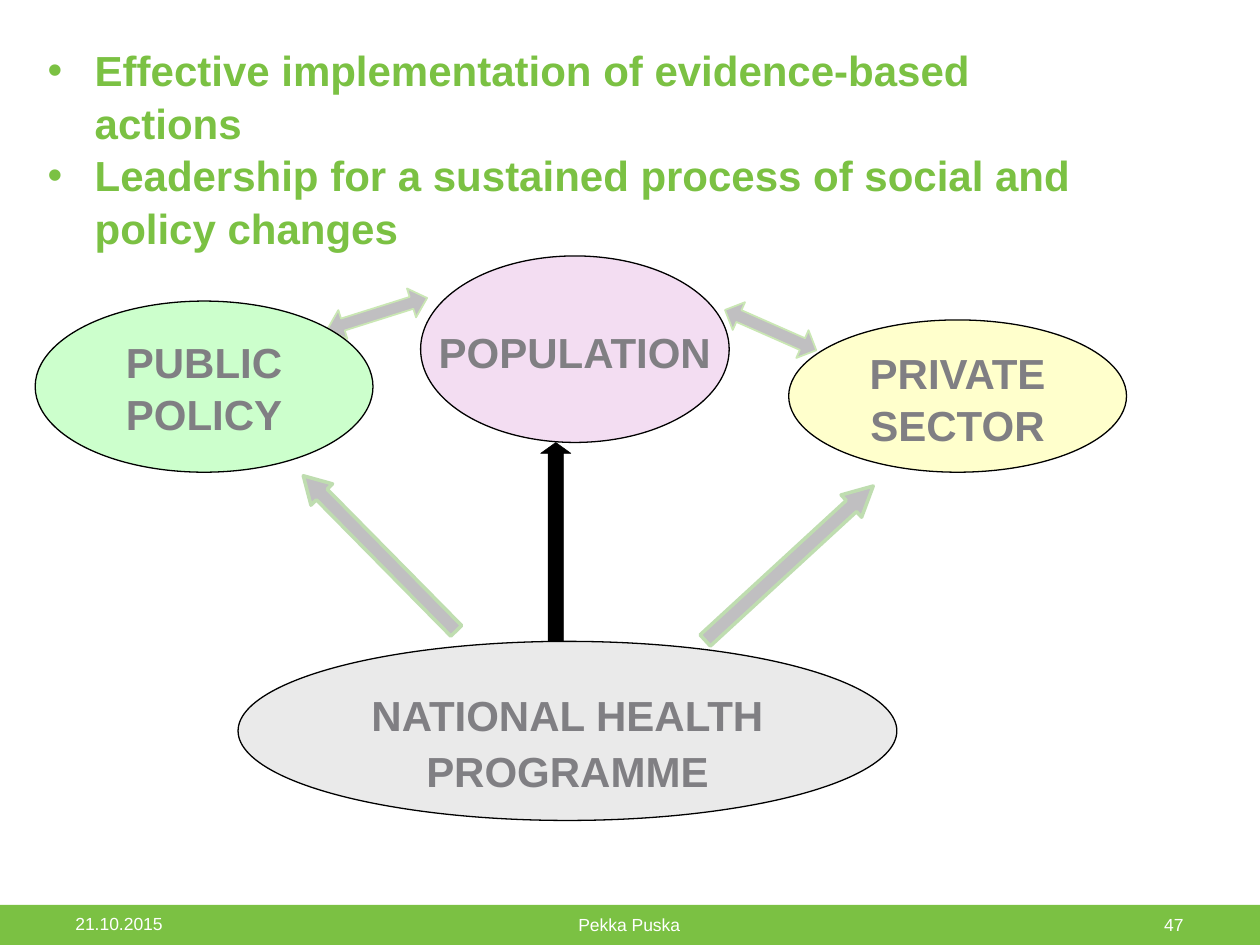
import lxml.etree
import pptx
import pptx.dml.color
import pptx.enum.shapes
import pptx.enum.text
import pptx.oxml.ns
import pptx.util
from pptx.util import Cm

SHAPE = pptx.enum.shapes.MSO_SHAPE
ALIGN = pptx.enum.text.PP_ALIGN
ANCHOR = pptx.enum.text.MSO_ANCHOR

THEME = {
    "font": "Arial",
    "green": "7BC143",
    "white": "FFFFFF",
    "label": "807F83",
    "outline": "000000",
    "arrow": "C0BFC1",
    "link edge": "CAE7B4",
    "influence edge": "BFDDB0",
    "heading size": 24,
    "footer size": 10,
    "line spacing": 1.04,
}

MESSAGES = [
    "Effective implementation of evidence-based actions",
    "Leadership for a sustained process of social and policy changes",
]
MESSAGE_BOX = (0.71, 0.74, 21.79, 4.37)
BULLET_INDENT = 0.95

# All boxes are left, top, width, height in centimetres.
FOOTER_BAR = (0, 18.24, 25.4, 0.81)
FOOTERS = [
    ("21.10.2015", (1.27, 18.31, 3.02, 0.61), ALIGN.LEFT),
    ("Pekka Puska", (4.29, 18.34, 16.79, 0.61), ALIGN.CENTER),
    ("47", (21.11, 18.34, 3, 0.61), ALIGN.RIGHT),
]

# Label lines, box, fill, line spacing, top inset
ACTORS = [
    (["PUBLIC", "POLICY"], (0.71, 6.07, 6.81, 3.45), "CCFFCC", 1.04, 0.13),
    (["NATIONAL HEALTH", "PROGRAMME"], (4.8, 12.93, 13.28, 3.61), "EAEAEA", 1.1, 0.5),
    (["POPULATION"], (8.48, 5.16, 6.22, 3.76), "F3DDF2", 1.04, 0.2),
    (["PRIVATE", "SECTOR"], (15.9, 6.45, 6.81, 3.07), "FFFFCC", 1.04, 0.2),
]

# Preset, box, rotation, adjustments, fill, edge, edge width
ARROWS_BEHIND = [
    (SHAPE.LEFT_RIGHT_ARROW, (6.55, 6.02, 2.11, 0.61), 342.5, (0.41, 0.54),
     "arrow", "link edge", 1),
    (SHAPE.LEFT_ARROW, (5.46, 10.85, 4.39, 0.61), 45.4, (0.5, 0.87),
     "arrow", "influence edge", 2),
    (SHAPE.RIGHT_ARROW, (13.61, 11.05, 4.6, 0.61), 317.4, (0.5, 0.98),
     "arrow", "influence edge", 2),
]
ARROWS_IN_FRONT = [
    (SHAPE.UP_ARROW, (10.9, 8.92, 0.61, 4.01), 0, (0.5, 0.36),
     "outline", "outline", 0.25),
    (SHAPE.LEFT_RIGHT_ARROW, (14.53, 6.35, 2.01, 0.61), 23.8, (0.42, 0.5),
     "arrow", "link edge", 1),
]


def color(value):
    return pptx.dml.color.RGBColor.from_string(value)


def add_shape(slide, preset, box, fill, edge=None, edge_width=0):
    shape = slide.shapes.add_shape(preset, *map(Cm, box))
    shape.shadow.inherit = False
    shape.fill.solid()
    shape.fill.fore_color.rgb = color(fill)
    if edge:
        shape.line.color.rgb = color(edge)
        shape.line.width = pptx.util.Pt(edge_width)
    else:
        shape.line.fill.background()
    return shape


def add_bullet(paragraph):
    properties = paragraph._p.get_or_add_pPr()
    properties.set("marL", str(Cm(BULLET_INDENT)))
    properties.set("indent", str(-Cm(BULLET_INDENT)))
    for tag, attribute, value in [("a:buFont", "typeface", THEME["font"]),
                                  ("a:buChar", "char", "•")]:
        element = lxml.etree.SubElement(properties, pptx.oxml.ns.qn(tag))
        element.set(attribute, value)


def write_lines(frame, lines, size, text_color, align=ALIGN.LEFT, bold=False,
                spacing=None, bulleted=False):
    for index, line in enumerate(lines):
        paragraph = frame.add_paragraph() if index else frame.paragraphs[0]
        paragraph.text = line
        paragraph.alignment = align
        paragraph.line_spacing = spacing
        if bulleted:
            add_bullet(paragraph)
        paragraph.font.name = THEME["font"]
        paragraph.font.size = pptx.util.Pt(size)
        paragraph.font.bold = bold
        paragraph.font.color.rgb = color(text_color)


def add_footer(slide):
    add_shape(slide, SHAPE.RECTANGLE, FOOTER_BAR, THEME["green"])
    for text, box, align in FOOTERS:
        frame = slide.shapes.add_textbox(*map(Cm, box)).text_frame
        frame.word_wrap = True
        frame.vertical_anchor = ANCHOR.MIDDLE
        write_lines(frame, [text], THEME["footer size"], THEME["white"], align)


def add_arrows(slide, arrows):
    for preset, box, rotation, adjustments, fill, edge, width in arrows:
        arrow = add_shape(slide, preset, box, THEME[fill], THEME[edge], width)
        arrow.rotation = rotation
        for index, value in enumerate(adjustments):
            arrow.adjustments[index] = value


def add_actors(slide):
    for lines, box, fill, spacing, top_inset in ACTORS:
        ellipse = add_shape(slide, SHAPE.OVAL, box, fill, THEME["outline"], 0.75)
        frame = ellipse.text_frame
        frame.word_wrap = False
        frame.vertical_anchor = ANCHOR.MIDDLE
        frame.margin_top = Cm(top_inset)
        write_lines(frame, lines, THEME["heading size"], THEME["label"],
                    ALIGN.CENTER, True, spacing)


def add_messages(slide):
    frame = slide.shapes.add_textbox(*map(Cm, MESSAGE_BOX)).text_frame
    frame.word_wrap = True
    write_lines(frame, MESSAGES, THEME["heading size"], THEME["green"],
                bold=True, spacing=THEME["line spacing"], bulleted=True)


def main():
    presentation = pptx.Presentation()
    presentation.slide_width = Cm(25.4)
    presentation.slide_height = Cm(19.05)
    slide = presentation.slides.add_slide(presentation.slide_layouts[6])
    add_footer(slide)
    add_arrows(slide, ARROWS_BEHIND)
    add_actors(slide)
    add_arrows(slide, ARROWS_IN_FRONT)
    add_messages(slide)
    presentation.save("out.pptx")


if __name__ == "__main__":
    main()
